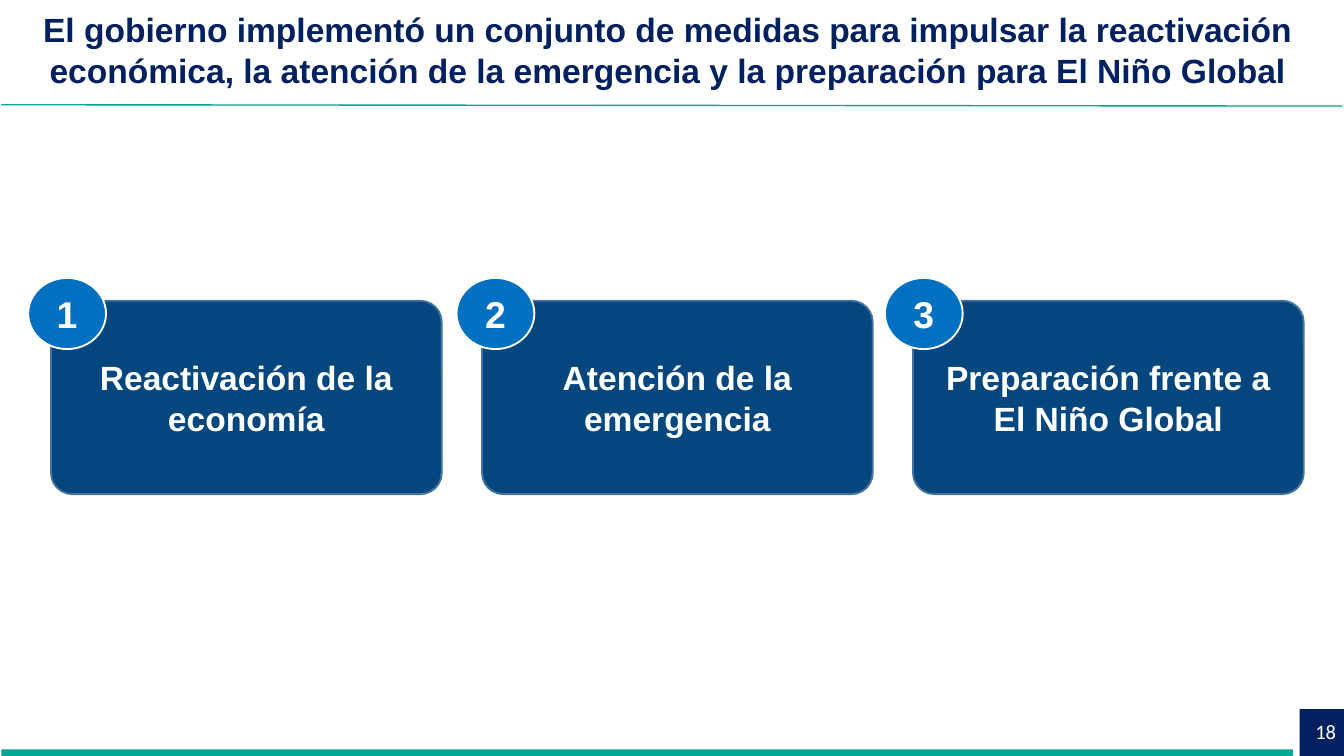
"""Build the slide that presents the three groups of government measures."""
from dataclasses import dataclass

from lxml import etree
from pptx import Presentation
from pptx import util as u
from pptx.dml.color import RGBColor
from pptx.enum import shapes, text
from pptx.oxml.ns import qn
from pptx.shapes.autoshape import Shape
from pptx.slide import Slide
from pptx.text.text import TextFrame

NAVY = RGBColor(0x00, 0x20, 0x60)
TEAL = RGBColor(0x00, 0xA7, 0x92)
CARD_BLUE = RGBColor(0x04, 0x47, 0x7E)
CARD_EDGE = RGBColor(0x43, 0x73, 0x9E)
BADGE_BLUE = RGBColor(0x00, 0x70, 0xC0)
WHITE = RGBColor(0xFF, 0xFF, 0xFF)

CARD_LEFT, CARD_STEP = 0.38, 3.21
BADGE_LEFT, BADGE_STEP = 0.21, 3.19
TITLE = (
    "El gobierno implementó un conjunto de medidas para impulsar la reactivación\n"
    "económica, la atención de la emergencia y la preparación para El Niño Global"
)
MEASURES = (
    "Reactivación de la economía",
    "Atención de la emergencia",
    "Preparación frente a El Niño Global",
)


@dataclass(frozen=True)
class Box:
    left: float
    top: float
    width: float
    height: float

    def lengths(self) -> tuple[u.Length, ...]:
        return tuple(u.Inches(v) for v in (self.left, self.top, self.width, self.height))


@dataclass(frozen=True)
class Style:
    size: float
    color: RGBColor = WHITE
    font: str = "Arial"
    bold: bool = True
    align: text.PP_ALIGN = text.PP_ALIGN.CENTER
    anchor: text.MSO_ANCHOR = text.MSO_ANCHOR.MIDDLE


def write(frame: TextFrame, content: str, style: Style) -> None:
    frame.text = content
    frame.word_wrap = True
    frame.auto_size = text.MSO_AUTO_SIZE.NONE
    frame.vertical_anchor = style.anchor
    for paragraph in frame.paragraphs:
        paragraph.alignment = style.align
        for run in paragraph.runs:
            run.font.name = style.font
            run.font.size = u.Pt(style.size)
            run.font.bold = style.bold
            run.font.color.rgb = style.color


def add_filled(slide: Slide, kind: shapes.MSO_SHAPE, box: Box, fill: RGBColor,
               edge: RGBColor | None = None) -> Shape:
    shape = slide.shapes.add_shape(kind, *box.lengths())
    shape.shadow.inherit = False
    shape.fill.solid()
    shape.fill.fore_color.rgb = fill
    if edge is None:
        shape.line.fill.background()
    else:
        shape.line.color.rgb = edge
        shape.line.width = u.Pt(1)
    return shape


def add_title(slide: Slide) -> None:
    title = slide.shapes.title
    title.left, title.top, title.width, title.height = Box(-0.03, 0.03, 10.01, 0.41).lengths()
    frame = title.text_frame
    frame.margin_left = frame.margin_right = u.Inches(0.08)
    frame.margin_top = frame.margin_bottom = u.Inches(0.04)
    write(frame, TITLE, Style(18, NAVY, anchor=text.MSO_ANCHOR.TOP))


def add_title_rule(slide: Slide) -> None:
    rule = slide.shapes.add_connector(
        shapes.MSO_CONNECTOR.STRAIGHT,
        u.Inches(0.01), u.Inches(0.78), u.Inches(10), u.Inches(0.79))
    rule.line.color.rgb = TEAL
    rule.line.width = u.Pt(0.75)
    etree.SubElement(rule.element.spPr, qn("a:effectLst"))


def add_footer(slide: Slide) -> None:
    rectangle = shapes.MSO_SHAPE.RECTANGLE
    add_filled(slide, rectangle, Box(0.01, 5.58, 9.62, 0.05), TEAL)
    add_filled(slide, rectangle, Box(9.68, 5.28, 0.33, 0.35), NAVY)
    number = slide.shapes.add_textbox(*Box(7.8, 5.3, 2.25, 0.3).lengths())
    write(number.text_frame, "18",
          Style(11, font="Calibri", bold=False, align=text.PP_ALIGN.RIGHT))


def add_measure(slide: Slide, index: int, label: str) -> None:
    card_box = Box(CARD_LEFT + index * CARD_STEP, 2.24, 2.91, 1.44)
    card = add_filled(slide, shapes.MSO_SHAPE.ROUNDED_RECTANGLE, card_box, CARD_BLUE, CARD_EDGE)
    card.adjustments[0] = 0.11
    write(card.text_frame, label, Style(18))

    badge_box = Box(BADGE_LEFT + index * BADGE_STEP, 2.07, 0.58, 0.53)
    badge = add_filled(slide, shapes.MSO_SHAPE.OVAL, badge_box, BADGE_BLUE, WHITE)
    badge.text_frame.margin_left = badge.text_frame.margin_right = 0
    write(badge.text_frame, str(index + 1), Style(20))


def main() -> None:
    presentation = Presentation()
    presentation.slide_width = u.Inches(10.01)
    presentation.slide_height = u.Inches(5.63)
    slide = presentation.slides.add_slide(presentation.slide_layouts[5])
    add_title(slide)
    add_title_rule(slide)
    add_footer(slide)
    for index, label in enumerate(MEASURES):
        add_measure(slide, index, label)
    presentation.save("out.pptx")


if __name__ == "__main__":
    main()
